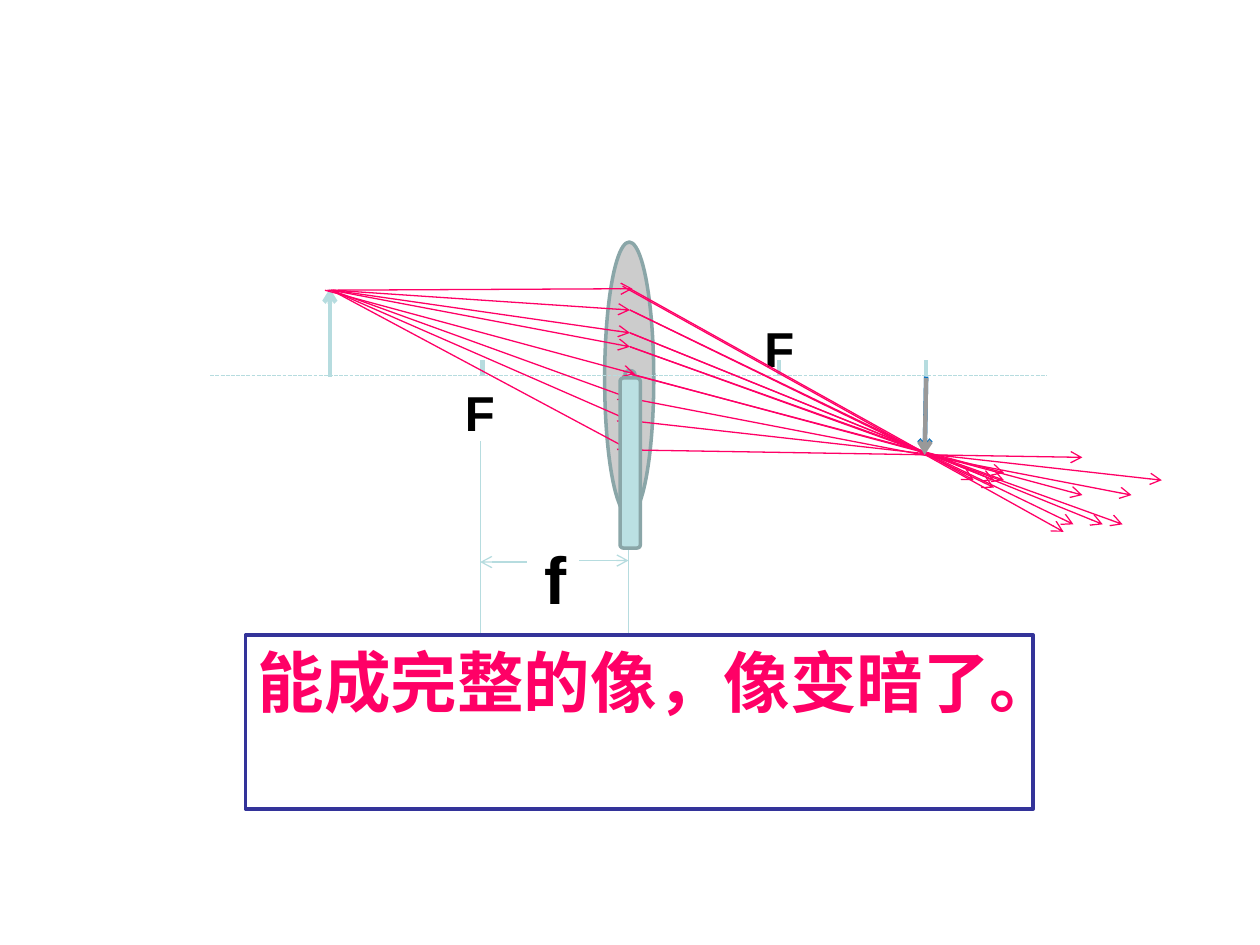
from lxml.etree import SubElement
from pptx import Presentation
from pptx.dml.color import RGBColor
from pptx.enum.dml import MSO_LINE as Dash
from pptx.enum.shapes import MSO_CONNECTOR as Conn, MSO_SHAPE as Kind
from pptx.enum.text import MSO_ANCHOR as Anchor, MSO_AUTO_SIZE as Fit, PP_ALIGN as Align
from pptx.oxml.ns import qn
from pptx.util import Cm, Pt

BLACK = RGBColor(0x00, 0x00, 0x00)
WHITE = RGBColor(0xFF, 0xFF, 0xFF)
GREY = RGBColor(0x99, 0x99, 0x99)
GLASS = RGBColor(0xCC, 0xCC, 0xCC)
PALE = RGBColor(0xB6, 0xDC, 0xDF)
AQUA = RGBColor(0xBB, 0xE0, 0xE3)
EDGE = RGBColor(0x8A, 0xA6, 0xA8)
BLUE = RGBColor(0x00, 0x70, 0xC0)
NAVY = RGBColor(0x33, 0x33, 0x99)
PINK = RGBColor(0xFF, 0x00, 0x66)


class Board:
    font = "Arial"
    thin, bold, rim = 0.75, 2.5, 2

    def __init__(self, slide):
        self.shapes = slide.shapes

    def line(self, start, end, color=PALE, width=thin, arrow=False, dash=None):
        item = self.shapes.add_connector(
            Conn.STRAIGHT, *(Cm(v) for v in (*start, *end)))
        item.line.color.rgb = color
        item.line.width = Pt(width)
        if dash:
            item.line.dash_style = dash
        props = item._element.spPr
        if arrow:
            SubElement(props.find(qn("a:ln")), qn("a:tailEnd"), type="arrow")
        SubElement(props, qn("a:effectLst"))

    def ray(self, start, end):
        self.line(start, end, PINK, arrow=True)

    def shape(self, kind, box, fill, edge=EDGE):
        item = self.shapes.add_shape(kind, *(Cm(v) for v in box))
        item.shadow.inherit = False
        item.fill.solid()
        item.fill.fore_color.rgb = fill
        item.line.color.rgb = edge
        item.line.width = Pt(self.rim)
        return item

    def text(self, item, words, size, color=BLACK, wrap=True):
        frame = item.text_frame
        frame.word_wrap = wrap
        frame.auto_size = Fit.SHAPE_TO_FIT_TEXT
        frame.vertical_anchor = Anchor.TOP
        para = frame.paragraphs[0]
        para.alignment = Align.LEFT
        run = para.add_run()
        run.text = words
        run.font.name = self.font
        run.font.size = Pt(size)
        run.font.bold = True
        run.font.color.rgb = color

    def label(self, words, box, size, wrap=True):
        item = self.shapes.add_textbox(*(Cm(v) for v in box))
        self.text(item, words, size, wrap=wrap)


def main():
    deck = Presentation()
    deck.slide_width, deck.slide_height = Cm(25.4), Cm(19.05)
    board = Board(deck.slides.add_slide(deck.slide_layouts[6]))

    # Lens, axis and focal points
    board.label("F", (15.16, 6.3, 0.99, 1.45), 28)
    board.shape(Kind.OVAL, (12.19, 4.88, 0.99, 5.51), GLASS)
    board.line((4.24, 7.57), (21.11, 7.57), dash=Dash.SQUARE_DOT)
    for x in (9.73, 15.7, 6.65, 18.67):
        board.line((x, 7.26), (x, 7.57), width=board.bold)
    board.label("F", (9.12, 7.59, 0.99, 1.45), 28)

    # Focal length
    for x in (9.68, 12.67):
        board.line((x, 8.89), (x, 12.92))
    board.line((11.68, 11.3), (12.67, 11.3), arrow=True)
    board.line((10.62, 11.33), (9.68, 11.33), arrow=True)
    board.label("f", (10.72, 10.72, 0.97, 1.88), 38, wrap=False)
    board.shape(Kind.OVAL, (12.6, 7.47, 0.2, 0.15), AQUA)

    # Object and image
    board.line((6.65, 7.59), (6.65, 5.82), width=board.bold, arrow=True)
    board.line((18.67, 7.59), (18.64, 9.14), BLUE, board.bold, arrow=True)

    # Rays from the object to the lens
    for x, end in (
        (6.6, (12.75, 5.82)), (6.55, (12.8, 7.54)),
        (6.71, (12.7, 6.25)), (6.71, (12.7, 6.71)),
        (6.68, (12.7, 6.99)), (6.68, (12.7, 8.03)),
        (6.68, (12.7, 9.07)), (6.68, (12.7, 8.48)),
    ):
        board.ray((x, 5.85), end)

    # Rays from the lens through the image
    for start, end in (
        ((12.55, 5.77), (21.44, 10.72)), ((12.7, 6.25), (21.64, 10.57)),
        ((12.7, 6.71), (22.23, 10.57)), ((12.7, 6.99), (22.63, 10.57)),
        ((12.7, 9.07), (21.82, 9.22)), ((12.7, 8.48), (23.42, 9.68)),
        ((12.7, 8.03), (22.81, 9.98)), ((12.73, 7.54), (21.82, 9.98)),
    ):
        board.ray(start, end)

    # Barrier over the lower half, and the rays that still pass
    board.shape(Kind.ROUNDED_RECTANGLE, (12.5, 7.62, 0.41, 3.43), AQUA)
    for y, end in (
        (5.82, (19.63, 9.68)), (6.25, (20.04, 9.83)), (6.71, (20.04, 9.68)),
        (6.99, (20.24, 9.68)), (7.54, (20.24, 9.53)),
    ):
        board.ray((12.7, y), end)
    board.line((18.67, 7.62), (18.64, 9.17), GREY, board.bold, arrow=True)

    # Conclusion
    box = board.shape(Kind.RECTANGLE, (4.95, 12.8, 15.88, 3.51), WHITE, NAVY)
    board.text(box, "能成完整的像，像变暗了。", 38, PINK)

    deck.save("out.pptx")


if __name__ == "__main__":
    main()
